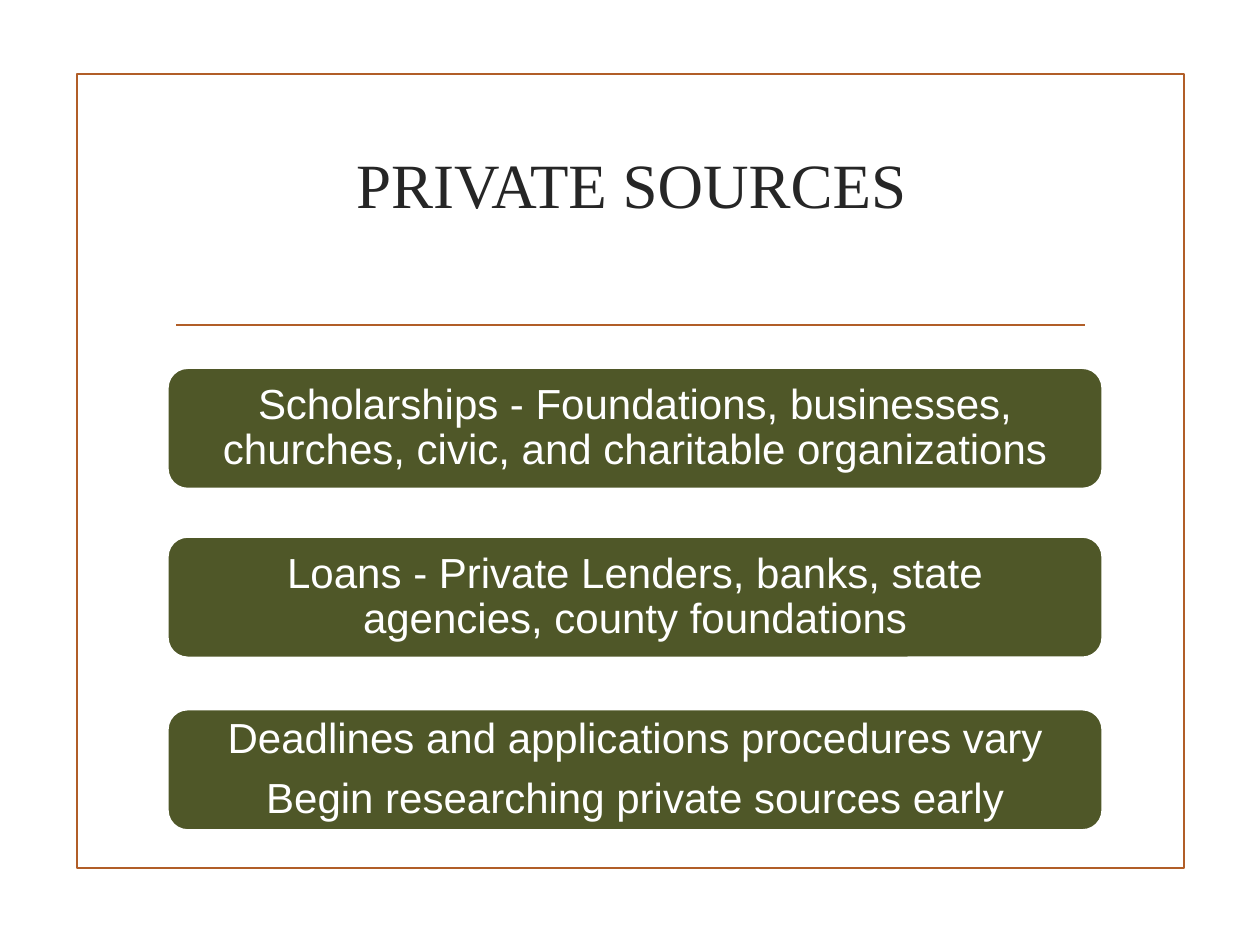
from pptx import Presentation
from pptx.dml.color import RGBColor
from pptx.enum import shapes, text
from pptx.oxml import ns
from pptx.util import Inches, Pt
from lxml import etree

HUES = {"rust": "B15E28", "olive": "4F5728", "white": "FFFFFF", "ink": "262626"}
CARDS = [
    (2.92, ["Scholarships - Foundations, businesses, churches, civic, "
            "and charitable organizations"]),
    (4.26, ["Loans - Private Lenders, banks, state agencies, county foundations"]),
    (5.63, ["Deadlines and applications procedures vary",
            "Begin researching private sources early"]),
]


def hue(name):
    return RGBColor.from_string(HUES[name])


def stroke(line, name):
    line.color.rgb = hue(name)
    line.width = Pt(1.25)


def add_run(para, words, face, size, name):
    run = para.add_run()
    run.text = words
    run.font.name = face
    run.font.size = Pt(size)
    run.font.color.rgb = hue(name)


def add_frame(slide, left, top, width, height):
    """Draw the page border and the rule under the title."""
    box = slide.shapes.add_shape(
        shapes.MSO_SHAPE.RECTANGLE,
        Inches(left), Inches(top), Inches(width), Inches(height))
    box.shadow.inherit = False
    box.fill.background()
    stroke(box.line, "rust")
    y = Inches(top + 1.99)
    rule = slide.shapes.add_connector(
        shapes.MSO_CONNECTOR.STRAIGHT,
        Inches(left + 0.79), y, Inches(left + width - 0.79), y)
    stroke(rule.line, "rust")
    etree.SubElement(rule._element.spPr, ns.qn("a:effectLst"))


def set_title(slide, left, top, width, height):
    title = slide.shapes.title
    title.left, title.top = Inches(left), Inches(top)
    title.width, title.height = Inches(width), Inches(height)
    frame = title.text_frame
    frame.vertical_anchor = text.MSO_ANCHOR.MIDDLE
    para = frame.paragraphs[0]
    para.alignment = text.PP_ALIGN.CENTER
    add_run(para, "PRIVATE SOURCES", "Times New Roman", 36, "ink")


def add_card(slide, left, top, width, height, lines):
    card = slide.shapes.add_shape(
        shapes.MSO_SHAPE.ROUNDED_RECTANGLE,
        Inches(left), Inches(top), Inches(width), Inches(height))
    card.shadow.inherit = False
    card.fill.solid()
    card.fill.fore_color.rgb = hue("olive")
    stroke(card.line, "white")
    frame = card.text_frame
    frame.word_wrap = True
    frame.vertical_anchor = text.MSO_ANCHOR.MIDDLE
    frame.margin_left = frame.margin_right = Inches(0.25)
    frame.margin_top = frame.margin_bottom = 0
    for i, words in enumerate(lines):
        para = frame.add_paragraph() if i else frame.paragraphs[0]
        para.alignment = text.PP_ALIGN.CENTER
        para.line_spacing = 0.9
        para.space_after = Pt(8.4)
        add_run(para, words, "Arial", 24, "white")


def main():
    deck = Presentation()
    deck.slide_width, deck.slide_height = Inches(10), Inches(7.5)
    slide = deck.slides.add_slide(deck.slide_layouts[5])
    add_frame(slide, 0.61, 0.59, 8.79, 6.3)
    set_title(slide, 1.29, 1.08, 7.44, 0.75)
    for top, lines in CARDS:
        add_card(slide, 1.33, top, 7.42, 0.96, lines)
    deck.save("out.pptx")


if __name__ == "__main__":
    main()
